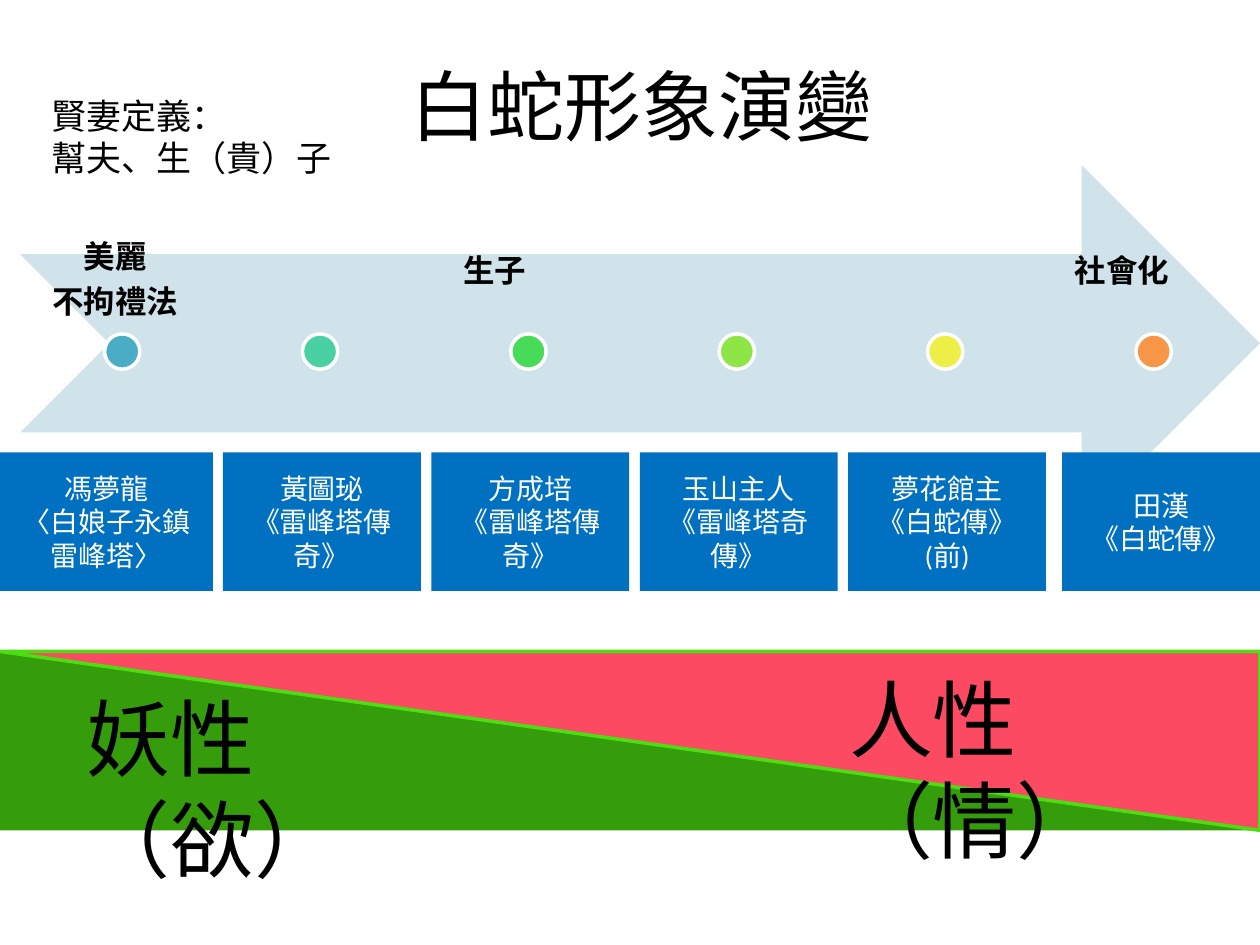
from dataclasses import dataclass

from pptx import Presentation
from pptx import util as u
from pptx.dml.color import RGBColor
from pptx.enum import shapes, text


@dataclass(frozen=True)
class Theme:
    body_font: str = "Calibri"
    display_font: str = "Noto Sans CJK SC"
    black: str = "000000"
    white: str = "FFFFFF"
    box: str = "0070C0"
    arrow: str = "D0E3EA"
    demon: str = "359D0B"
    human: str = "FC4A63"
    edge: str = "4BDE10"
    title_size: int = 44
    nature_size: int = 48
    note_size: int = 20
    label_size: int = 18
    box_size: int = 16
    line_width: int = 2


THEME = Theme()
WIDTH, HEIGHT = 10, 7.5

TITLE = "白蛇形象演變"
VERSIONS = [
    (["馮夢龍", "〈白娘子永鎮雷峰塔〉"], "4BACC6"),
    (["黃圖珌", "《雷峰塔傳奇》"], "49D1A3"),
    (["方成培", "《雷峰塔傳奇》"], "47DC57"),
    (["玉山主人", "《雷峰塔奇傳》"], "8DE646"),
    (["夢花館主", "《白蛇傳》(前)"], "EEEF46"),
    (["田漢", "《白蛇傳》"], "F79646"),
]
FIRST_TRAITS = ["美麗", "不拘禮法"]
TEXTS = [
    (["生子"], (3.58, 1.94, 1.5, 0.4), THEME.label_size, THEME.body_font, True),
    (["社會化"], (8.43, 1.94, 1.57, 0.4), THEME.label_size, THEME.body_font, True),
    (["妖性（欲）"], (0.59, 5.4, 3.08, 0.91), THEME.nature_size, THEME.display_font, False),
    (["人性（情）"], (6.64, 5.25, 3.36, 0.91), THEME.nature_size, THEME.display_font, False),
    (["賢妻定義：", "幫夫、生（貴）子"], (0.31, 0.7, 2.5, 0.77),
     THEME.note_size, THEME.body_font, False),
]

BOX_TOP, BOX_WIDTH, BOX_HEIGHT = 3.59, 1.57, 1.1
FIRST_BOX_WIDTH = 1.69
GRID_LEFT, PITCH = 1.77, 1.654
DOT_TOP, DOT_SIZE, FIRST_DOT_LEFT, DOT_INSET = 2.65, 0.28, 0.83, 0.63
BAND = (0, 5.17, WIDTH, 1.42)


def inches(place):
    return [u.Inches(value) for value in place]


def write(shape, lines, size, color, font=THEME.body_font, bold=False,
          align=text.PP_ALIGN.LEFT, anchor=text.MSO_ANCHOR.TOP):
    frame = shape.text_frame
    frame.text = "\n".join(lines)
    frame.word_wrap = True
    frame.vertical_anchor = anchor
    for paragraph in frame.paragraphs:
        paragraph.alignment = align
        paragraph.font.name = font
        paragraph.font.size = u.Pt(size)
        paragraph.font.bold = bold
        paragraph.font.color.rgb = RGBColor.from_string(color)
    return frame


def add_shape(slide, kind, place, fill, line=None):
    shape = slide.shapes.add_shape(kind, *inches(place))
    shape.shadow.inherit = False
    shape.fill.solid()
    shape.fill.fore_color.rgb = RGBColor.from_string(fill)
    if line:
        shape.line.color.rgb = RGBColor.from_string(line)
        shape.line.width = u.Pt(THEME.line_width)
    else:
        shape.line.fill.background()
    return shape


def add_title(slide):
    title = slide.shapes.title
    title.left, title.top, title.width, title.height = inches((0.59, 0.21, 9, 1.25))
    write(title, [TITLE], THEME.title_size, THEME.black, THEME.display_font,
          align=text.PP_ALIGN.CENTER, anchor=text.MSO_ANCHOR.MIDDLE)


def add_timeline(slide):
    add_shape(slide, shapes.MSO_SHAPE.NOTCHED_RIGHT_ARROW, (0.16, 1.31, 9.84, 2.83), THEME.arrow)
    last = len(VERSIONS) - 1
    for index, (lines, color) in enumerate(VERSIONS):
        column = GRID_LEFT + (index - 1) * PITCH
        box_left = 0 if index == 0 else WIDTH - BOX_WIDTH if index == last else column
        box_width = BOX_WIDTH if index else FIRST_BOX_WIDTH
        dot_left = column + DOT_INSET if index else FIRST_DOT_LEFT
        box = add_shape(slide, shapes.MSO_SHAPE.RECTANGLE,
                        (box_left, BOX_TOP, box_width, BOX_HEIGHT), THEME.box)
        write(box, lines, THEME.box_size, THEME.white,
              align=text.PP_ALIGN.CENTER, anchor=text.MSO_ANCHOR.MIDDLE)
        add_shape(slide, shapes.MSO_SHAPE.OVAL,
                  (dot_left, DOT_TOP, DOT_SIZE, DOT_SIZE), color, THEME.white)


def add_first_traits(slide):
    label = slide.shapes.add_textbox(*inches((0.23, 1.55, 1.37, 1.13)))
    frame = write(label, FIRST_TRAITS, THEME.label_size, THEME.black, bold=True,
                  align=text.PP_ALIGN.CENTER, anchor=text.MSO_ANCHOR.BOTTOM)
    margin = u.Inches(0.14)
    frame.margin_left = frame.margin_right = margin
    frame.margin_top = frame.margin_bottom = margin
    for paragraph in frame.paragraphs:
        paragraph.line_spacing = 0.9
        paragraph.space_after = u.Pt(0.35 * THEME.label_size)


def add_nature_band(slide):
    add_shape(slide, shapes.MSO_SHAPE.RIGHT_TRIANGLE, BAND, THEME.demon)
    human = add_shape(slide, shapes.MSO_SHAPE.RIGHT_TRIANGLE, BAND, THEME.human, THEME.edge)
    human.rotation = 180


def main():
    presentation = Presentation()
    presentation.slide_width, presentation.slide_height = inches((WIDTH, HEIGHT))
    slide = presentation.slides.add_slide(presentation.slide_layouts.get_by_name("Title Only"))
    add_title(slide)
    add_timeline(slide)
    add_first_traits(slide)
    add_nature_band(slide)
    for lines, place, size, font, bold in TEXTS:
        write(slide.shapes.add_textbox(*inches(place)), lines, size, THEME.black, font, bold)
    presentation.save("out.pptx")


if __name__ == "__main__":
    main()
